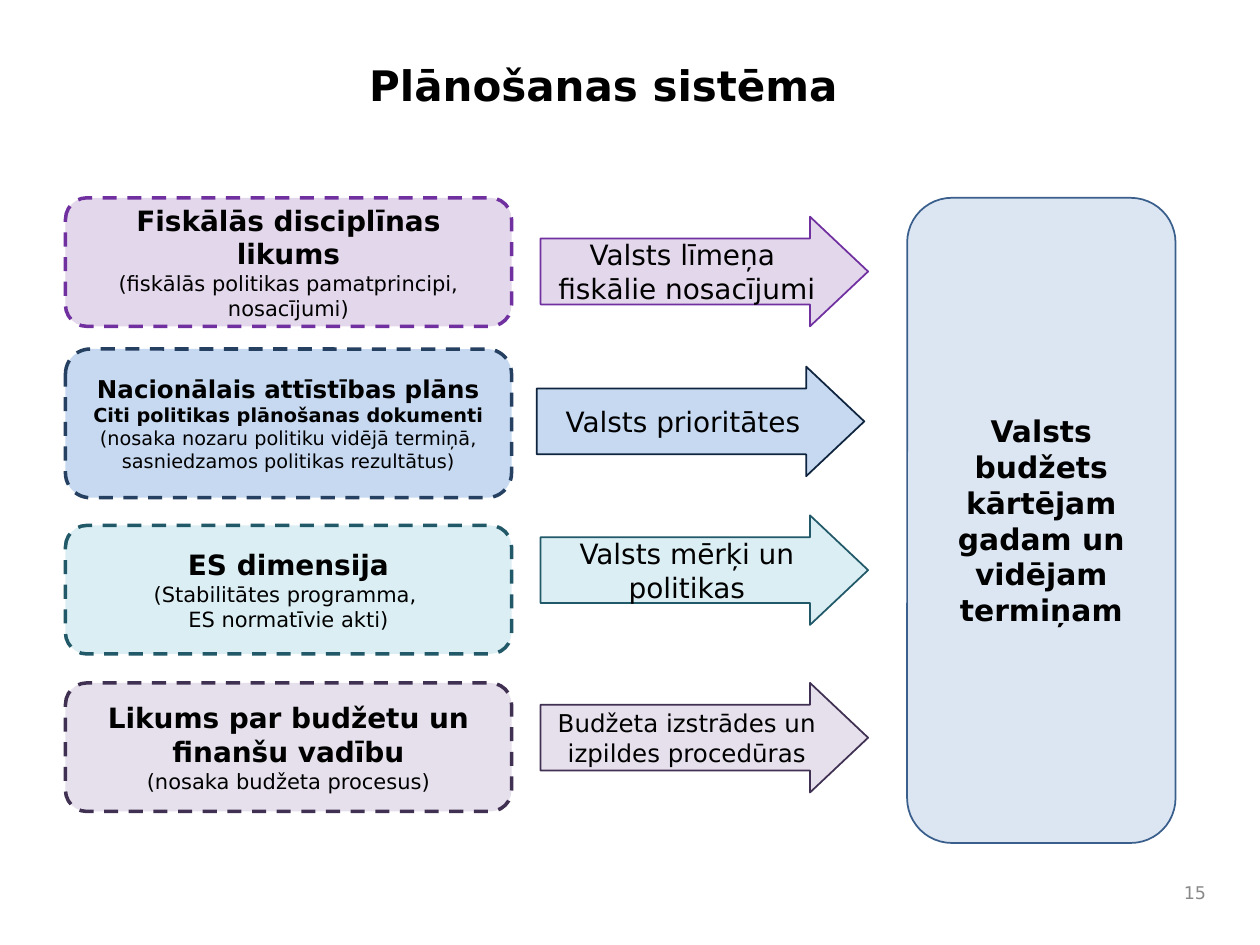
from pptx import Presentation
from pptx.dml.color import RGBColor
from pptx.enum import dml, shapes, text
from pptx.util import Inches, Pt

FONT = "DejaVu Sans"
COLORS = {
    "text": "000000", "number": "898989",
    "budget": "DCE6F2", "budget_line": "3A5F8C",
    "fiscal": "E3D7EB", "fiscal_line": "7030A0",
    "national": "C6D9F1", "national_line": "254061", "national_arrow_line": "0F243E",
    "eu": "DBEEF4", "eu_line": "215968",
    "law": "E6E0EC", "law_line": "403152",
}

# Content: each paragraph is (text, size, bold)
TITLE = [("Plānošanas sistēma", 24, True)]
NUMBER = [("15", 10, False)]
BUDGET = [("Valsts budžets kārtējam gadam un vidējam termiņam", 17, True)]
ROWS = [
    {"key": "fiscal", "top": 1.57, "height": 1.02, "arrow": (4.29, 1.72),
     "source": [("Fiskālās disciplīnas likums", 16, True),
                ("(fiskālās politikas pamatprincipi, nosacījumi)", 12, False)],
     "result": [("Valsts līmeņa ", 16, False), ("fiskālie nosacījumi", 16, False)]},
    {"key": "national", "top": 2.77, "height": 1.18, "arrow": (4.26, 2.91),
     "source": [("Nacionālais attīstības plāns", 14, True),
                ("Citi politikas plānošanas dokumenti", 11, True),
                ("(nosaka nozaru politiku vidējā termiņā, "
                 "sasniedzamos politikas rezultātus)", 11, False)],
     "result": [("Valsts prioritātes", 16, False)]},
    {"key": "eu", "top": 4.17, "height": 1.02, "arrow": (4.29, 4.09),
     "source": [("ES dimensija", 16, True),
                ("(Stabilitātes programma, ", 12, False),
                ("ES normatīvie akti)", 12, False)],
     "result": [("Valsts mērķi un politikas", 16, False)]},
    {"key": "law", "top": 5.42, "height": 1.02, "arrow": (4.29, 5.42),
     "source": [("Likums par budžetu un finanšu vadību", 16, True),
                ("(nosaka budžeta procesus)", 12, False)],
     "result": [("Budžeta izstrādes un izpildes procedūras", 14, False)]},
]

SOURCE_LEFT, SOURCE_WIDTH = 0.52, 3.54
ARROW_SIZE = (2.6, 0.87)
ARROW_ADJUSTMENTS = (0.6, 0.53)


def rgb(key):
    return RGBColor.from_string(COLORS[key])


def write(frame, paragraphs, align, anchor=text.MSO_ANCHOR.MIDDLE, color="text"):
    frame.word_wrap = True
    frame.auto_size = text.MSO_AUTO_SIZE.NONE
    frame.vertical_anchor = anchor
    for i, (words, size, bold) in enumerate(paragraphs):
        line = frame.add_paragraph() if i else frame.paragraphs[0]
        line.alignment = align
        run = line.add_run()
        run.text = words
        for name, value in {"name": FONT, "size": Pt(size), "bold": bold}.items():
            setattr(run.font, name, value)
        run.font.color.rgb = rgb(color)


def add_block(slide, preset, box, fill, line, width, paragraphs):
    block = slide.shapes.add_shape(preset, *map(Inches, box))
    block.shadow.inherit = False
    block.fill.solid()
    block.fill.fore_color.rgb = rgb(fill)
    block.line.color.rgb = rgb(line)
    block.line.width = Pt(width)
    write(block.text_frame, paragraphs, text.PP_ALIGN.CENTER)
    return block


def main():
    deck = Presentation()
    deck.slide_width, deck.slide_height = Inches(10), Inches(7.5)
    slide = deck.slides.add_slide(deck.slide_layouts[5])

    # Title
    title = slide.shapes.title
    place = {"left": 2.83, "top": 0.42, "width": 6.67, "height": 0.65}
    for side, length in place.items():
        setattr(title, side, Inches(length))
    write(title.text_frame, TITLE, text.PP_ALIGN.LEFT, text.MSO_ANCHOR.TOP)

    # Slide number
    number = slide.shapes.add_textbox(*map(Inches, (9.21, 6.92, 0.46, 0.33)))
    write(number.text_frame, NUMBER, text.PP_ALIGN.RIGHT, color="number")

    # Budget that all the inputs lead to
    rounded = shapes.MSO_SHAPE.ROUNDED_RECTANGLE
    add_block(slide, rounded, (7.2, 1.57, 2.13, 5.12),
              "budget", "budget_line", 1, BUDGET)

    # Planning documents
    for row in ROWS:
        box = (SOURCE_LEFT, row["top"], SOURCE_WIDTH, row["height"])
        source = add_block(slide, rounded, box, row["key"], row["key"] + "_line",
                           2, row["source"])
        source.line.dash_style = dml.MSO_LINE.DASH

    # What each document gives to the budget
    for row in ROWS:
        arrow_line = row["key"] + "_arrow_line"
        if arrow_line not in COLORS:
            arrow_line = row["key"] + "_line"
        arrow = add_block(slide, shapes.MSO_SHAPE.RIGHT_ARROW,
                          row["arrow"] + ARROW_SIZE, row["key"], arrow_line,
                          1, row["result"])
        for i, value in enumerate(ARROW_ADJUSTMENTS):
            arrow.adjustments[i] = value

    deck.save("out.pptx")


if __name__ == "__main__":
    main()
